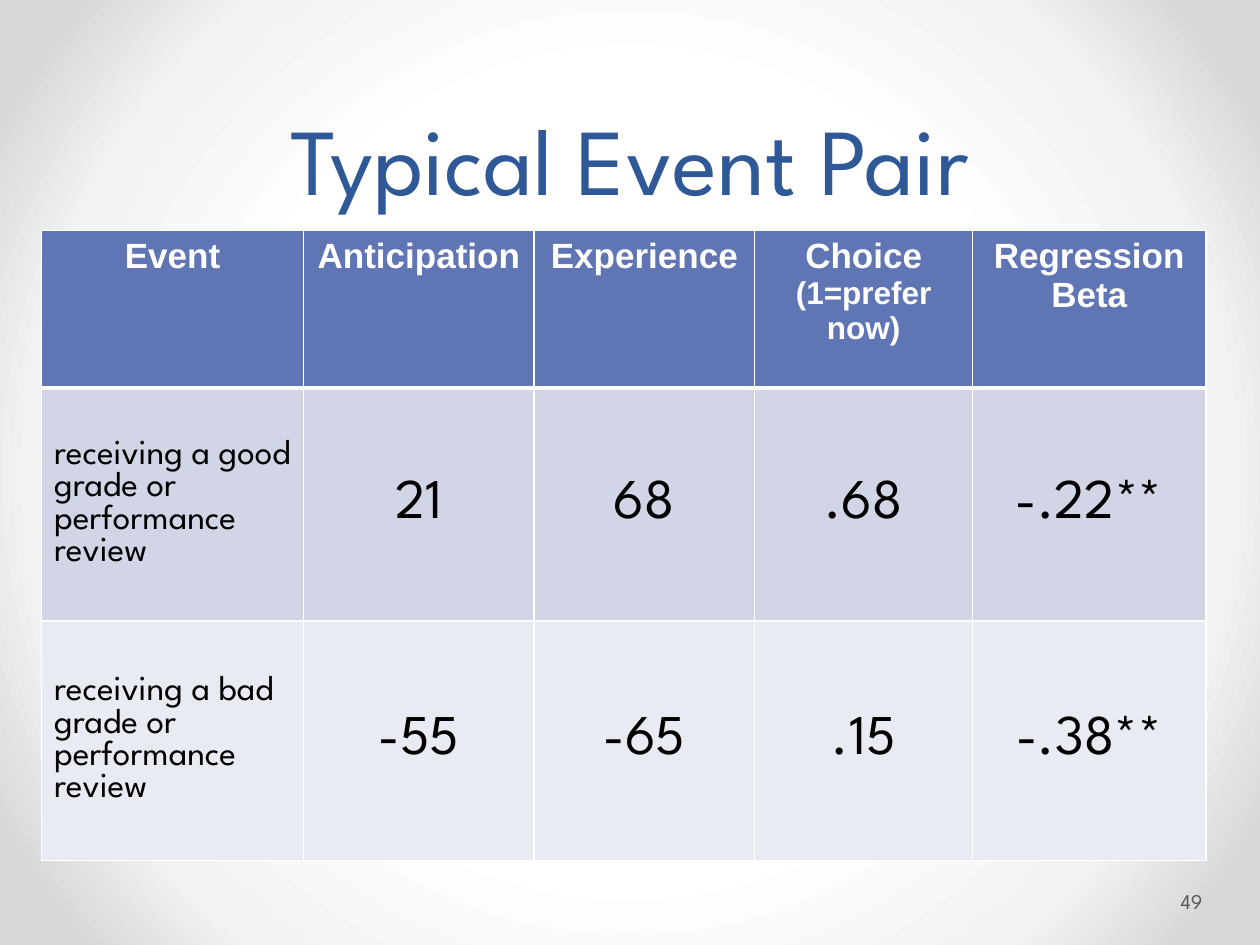
"""Builds the slide that compares a typical pair of events."""
from lxml import etree
from pptx import Presentation
from pptx.dml.color import RGBColor
from pptx.enum.text import MSO_ANCHOR as Anchor, PP_ALIGN as Align
from pptx.oxml import parse_xml
from pptx.oxml.ns import nsdecls, qn
from pptx.util import Inches, Pt

WHITE = RGBColor(0xFF, 0xFF, 0xFF)
BLACK = RGBColor(0, 0, 0)
TITLE_BLUE = RGBColor(0x2F, 0x58, 0x97)
NUMBER_GRAY = RGBColor(0x59, 0x59, 0x59)
HEADER_BLUE = RGBColor(0x60, 0x76, 0xB4)
BANDS = [RGBColor(0xD1, 0xD5, 0xE5), RGBColor(0xE9, 0xEB, 0xF2)]
GLOW = [(0, "FFFFFF"), (50, "FFFFFF"), (76, "F3F3F3"), (92, "D8D8D8"), (100, "D8D8D8")]

COLUMNS = [2.08, 1.83, 1.75, 1.73, 1.85]
ROWS = [1.25, 1.85, 1.9]
HEADERS = ["Event", "Anticipation", "Experience", "Choice\n(1=prefer now)", "Regression Beta"]
EVENTS = [
    ["receiving a good grade or performance review", "21", "68", ".68", "-.22**"],
    ["receiving a bad grade or performance review", "-55", "-65", ".15", "-.38**"],
]


class SlideBuilder:
    def __init__(self, deck):
        self.page = deck.slides.add_slide(deck.slide_layouts[5])
        self.body_font = "League Spartan"
        self.header_font = "Arial"

    def style(self, para, size, color, align=Align.LEFT, font=None, bold=False):
        para.alignment = align
        for span in para.runs:
            span.font.name = font or self.body_font
            span.font.size = Pt(size)
            span.font.bold = bold
            span.font.color.rgb = color

    def background(self, stops):
        self.page.background.fill.solid()
        solid = self.page.element.find(".//" + qn("p:bgPr")).find(qn("a:solidFill"))
        marks = "".join(
            f'<a:gs pos="{place * 1000}"><a:srgbClr val="{color}"/></a:gs>'
            for place, color in stops
        )
        glow = parse_xml(
            f'<a:gradFill {nsdecls("a")} rotWithShape="1"><a:gsLst>{marks}</a:gsLst>'
            '<a:path path="circle"><a:fillToRect l="50000" t="50000" r="50000" b="50000"/>'
            "</a:path></a:gradFill>"
        )
        solid.getparent().replace(solid, glow)

    def title(self, text):
        box = self.page.shapes.title
        box.left, box.top, box.width, box.height = map(Inches, (0.5, 0, 9, 1.75))
        frame = box.text_frame
        frame.text = text
        frame.vertical_anchor = Anchor.BOTTOM
        frame.paragraphs[0].line_spacing = 1.07
        self.style(frame.paragraphs[0], 54, TITLE_BLUE, Align.CENTER)

    def page_number(self, text):
        box = self.page.shapes.add_textbox(*map(Inches, (9.34, 6.95, 0.61, 0.4)))
        frame = box.text_frame
        frame.word_wrap = True
        frame.margin_left, frame.margin_right = Inches(0.03), Inches(0.05)
        frame.vertical_anchor = Anchor.MIDDLE
        frame.text = text
        self.style(frame.paragraphs[0], 12, NUMBER_GRAY)

    def borders(self, cell, top, bottom):
        properties = cell._tc.get_or_add_tcPr()
        widths = {"lnL": 1, "lnR": 1, "lnT": top, "lnB": bottom}
        for index, (side, width) in enumerate(widths.items()):
            line = etree.Element(qn(f"a:{side}"), w=str(Pt(width)))
            fill = etree.SubElement(line, qn("a:solidFill"))
            etree.SubElement(fill, qn("a:srgbClr"), val=str(WHITE))
            properties.insert(index, line)

    def header_cell(self, cell, text):
        cell.text = text
        cell.fill.solid()
        cell.fill.fore_color.rgb = HEADER_BLUE
        for para, size in zip(cell.text_frame.paragraphs, (20, 18)):
            self.style(para, size, WHITE, Align.CENTER, self.header_font, True)
        self.borders(cell, top=1, bottom=3)

    def event_cell(self, cell, text, color, is_label, top):
        cell.text = text
        cell.vertical_anchor = Anchor.MIDDLE
        cell.fill.solid()
        cell.fill.fore_color.rgb = color
        size, align = (20, Align.LEFT) if is_label else (32, Align.CENTER)
        self.style(cell.text_frame.paragraphs[0], size, BLACK, align)
        self.borders(cell, top=top, bottom=1)

    def table(self, headers, events):
        table = self.page.shapes.add_table(
            len(ROWS), len(COLUMNS), Inches(0.33), Inches(1.83),
            Inches(sum(COLUMNS)), Inches(sum(ROWS)),
        ).table
        for column, width in zip(table.columns, COLUMNS):
            column.width = Inches(width)
        for row, height in zip(table.rows, ROWS):
            row.height = Inches(height)
        for index, text in enumerate(headers):
            self.header_cell(table.cell(0, index), text)
        for number, (values, color) in enumerate(zip(events, BANDS), start=1):
            for index, text in enumerate(values):
                top = 3 if number == 1 else 1
                self.event_cell(table.cell(number, index), text, color, index == 0, top)


def main():
    deck = Presentation()
    deck.slide_width, deck.slide_height = Inches(10), Inches(7.5)
    builder = SlideBuilder(deck)
    builder.background(GLOW)
    builder.title("Typical Event Pair")
    builder.page_number("49")
    builder.table(HEADERS, EVENTS)
    deck.save("out.pptx")


if __name__ == "__main__":
    main()
